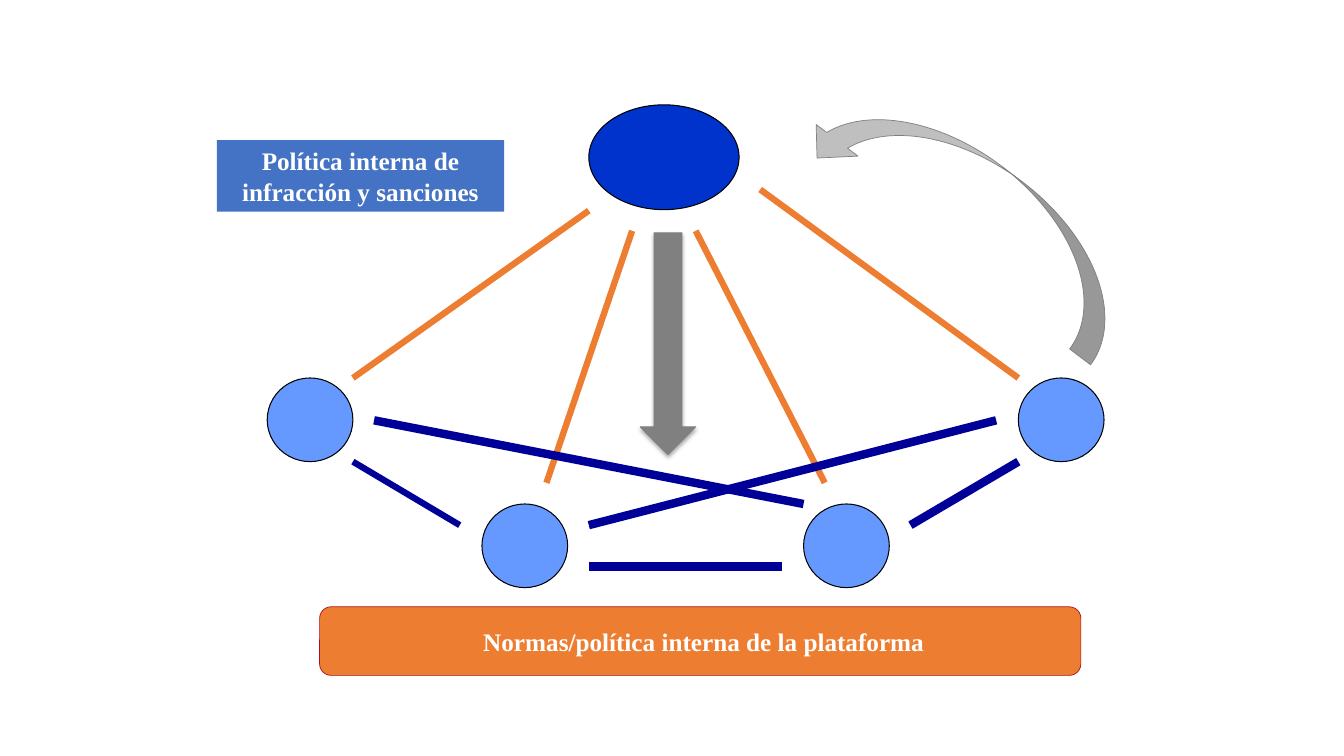
from lxml import etree
from pptx import Presentation
from pptx.dml.color import RGBColor
from pptx.enum.shapes import MSO_CONNECTOR, MSO_SHAPE
from pptx.enum.text import MSO_ANCHOR, PP_ALIGN
from pptx.oxml import parse_xml
from pptx.oxml.ns import qn
from pptx.util import Inches, Pt

OVAL, ROUNDED, RECTANGLE = MSO_SHAPE.OVAL, MSO_SHAPE.ROUNDED_RECTANGLE, MSO_SHAPE.RECTANGLE
DOWN_ARROW, CURVED_ARROW = MSO_SHAPE.DOWN_ARROW, MSO_SHAPE.CURVED_UP_ARROW
STRAIGHT = MSO_CONNECTOR.STRAIGHT
CENTER, MIDDLE = PP_ALIGN.CENTER, MSO_ANCHOR.MIDDLE

BLACK = RGBColor(0x00, 0x00, 0x00)
WHITE = RGBColor(0xFF, 0xFF, 0xFF)
PLATFORM_BLUE = RGBColor(0x00, 0x33, 0xCC)
USER_BLUE = RGBColor(0x66, 0x99, 0xFF)
NAVY = RGBColor(0x00, 0x00, 0x99)
LABEL_BLUE = RGBColor(0x44, 0x72, 0xC4)
ORANGE = RGBColor(0xED, 0x7D, 0x31)
DARK_RED = RGBColor(0xAB, 0x0E, 0x1E)
GRAY = RGBColor(0x80, 0x80, 0x80)
LIGHT_GRAY = RGBColor(0xBF, 0xBF, 0xBF)

# Content: places are (left, top, width, height), lines are (x1, y1, x2, y2)
PLATFORM = (5.84, 1.04, 1.49, 1.04)
USER_SIZE = (0.85, 0.83)
USERS = [(2.65, 3.75), (4.78, 5), (7.97, 5), (10.1, 3.75)]
PLATFORM_LINKS = [
    (3.5, 3.75, 5.84, 2.09),
    (6.27, 2.29, 5.42, 4.79),
    (6.9, 2.29, 8.18, 4.79),
    (7.54, 1.88, 10.1, 3.75),
]
THIN_USER_LINKS = [(3.5, 4.58, 4.56, 5.21)]
USER_LINKS = [
    (5.84, 5.62, 7.76, 5.62),
    (9.03, 5.21, 10.1, 4.58),
    (3.71, 4.17, 7.97, 5),
    (5.84, 5.21, 9.88, 4.17),
]
LABELS = [
    ("Normas/política interna de la plataforma", (3.86, 6.16, 6.24, 0.4), ORANGE),
    ("Política interna de infracción y sanciones", (2.15, 1.39, 2.85, 0.71), LABEL_BLUE),
]
LABEL_FONT = {"name": "Times New Roman", "size": Pt(18), "bold": True}
SHADOW = (
    '<a:effectLst xmlns:a="http://schemas.openxmlformats.org/drawingml/2006/main">'
    '<a:outerShdw blurRad="39370" dist="22860" dir="5400000" rotWithShape="0">'
    '<a:srgbClr val="000000"><a:alpha val="35000"/></a:srgbClr>'
    "</a:outerShdw></a:effectLst>"
)


def add_part(page, kind, place, fill, line=None, width=0.75):
    part = page.shapes.add_shape(kind, *map(Inches, place))
    part.shadow.inherit = False
    part.fill.solid()
    part.fill.fore_color.rgb = fill
    if line is None:
        part.line.fill.background()
    else:
        part.line.color.rgb = line
        part.line.width = Pt(width)
    return part


def add_link(page, ends, color, width):
    link = page.shapes.add_connector(STRAIGHT, *map(Inches, ends))
    link.line.color.rgb = color
    link.line.width = Pt(width)
    etree.SubElement(link._element.spPr, qn("a:effectLst"))


def add_label(page, text, place, fill):
    frame = add_part(page, RECTANGLE, place, fill).text_frame
    frame.word_wrap = True
    frame.vertical_anchor = MIDDLE
    para = frame.paragraphs[0]
    para.alignment = CENTER
    span = para.add_run()
    span.text = text
    span.font.color.rgb = WHITE
    for name, value in LABEL_FONT.items():
        setattr(span.font, name, value)


def main():
    deck = Presentation()
    deck.slide_width, deck.slide_height = Inches(13.33), Inches(7.5)
    page = deck.slides.add_slide(deck.slide_layouts[6])

    # Platform and users
    add_part(page, OVAL, PLATFORM, PLATFORM_BLUE, BLACK)
    for corner in USERS:
        add_part(page, OVAL, corner + USER_SIZE, USER_BLUE, BLACK)

    # Links
    for links, color, width in [
        (PLATFORM_LINKS, ORANGE, 4.5),
        (THIN_USER_LINKS, NAVY, 4.5),
        (USER_LINKS, NAVY, 6),
    ]:
        for ends in links:
            add_link(page, ends, color, width)

    # Arrows
    down = add_part(page, DOWN_ARROW, (6.35, 2.31, 0.55, 2.2), GRAY, GRAY)
    properties = down._element.spPr
    properties.replace(properties.find(qn("a:effectLst")), parse_xml(SHADOW))
    curve = add_part(page, CURVED_ARROW, (7.84, 1.58, 3.66, 1.04), LIGHT_GRAY, GRAY, 0.5)
    curve.rotation = 217.1

    # Rules bar and labels
    add_part(page, ROUNDED, (3.17, 6.02, 7.55, 0.68), ORANGE, DARK_RED, 0.5)
    for text, place, fill in LABELS:
        add_label(page, text, place, fill)

    deck.save("out.pptx")


if __name__ == "__main__":
    main()
